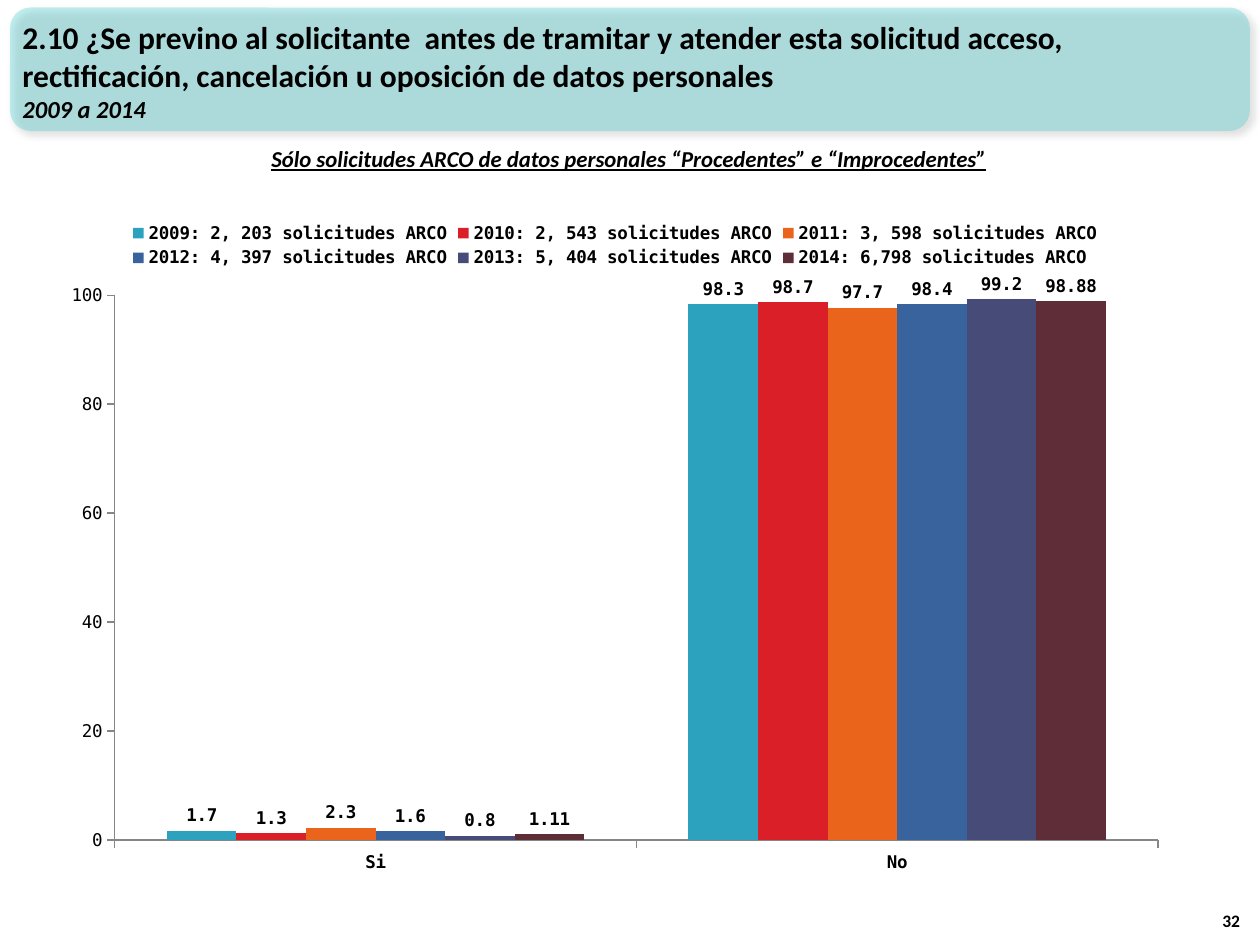
from dataclasses import dataclass

from lxml import etree
from pptx import Presentation
from pptx.chart.data import CategoryChartData
from pptx.dml.color import RGBColor
from pptx.enum.chart import XL_CHART_TYPE, XL_LABEL_POSITION, XL_LEGEND_POSITION, XL_TICK_MARK
from pptx.enum.shapes import MSO_SHAPE
from pptx.enum.text import MSO_ANCHOR, PP_ALIGN
from pptx.oxml import parse_xml
from pptx.oxml.ns import qn
from pptx.util import Inches, Pt

COLUMNS = XL_CHART_TYPE.COLUMN_CLUSTERED
OUTSIDE_END = XL_LABEL_POSITION.OUTSIDE_END
LEGEND_TOP = XL_LEGEND_POSITION.TOP
TICK_OUT = XL_TICK_MARK.OUTSIDE
ROUNDED = MSO_SHAPE.ROUNDED_RECTANGLE
TOP, MIDDLE, BOTTOM = MSO_ANCHOR.TOP, MSO_ANCHOR.MIDDLE, MSO_ANCHOR.BOTTOM
LEFT, CENTER, RIGHT = PP_ALIGN.LEFT, PP_ALIGN.CENTER, PP_ALIGN.RIGHT

WIDTH, HEIGHT = 10, 7.5
BLACK, AXIS_GREY, TEAL = "000000", "868686", "33CCCC"
TEXT_FONT, CHART_FONT = "Calibri", "DejaVu Sans Mono"
A_NS = "http://schemas.openxmlformats.org/drawingml/2006/main"
C_NS = "http://schemas.openxmlformats.org/drawingml/2006/chart"
PLOT_SHARES = {"x": 0.058, "y": 0.127, "w": 0.922, "h": 0.804}


@dataclass(frozen=True)
class Box:
    """A place on the slide, in inches."""
    left: float
    top: float
    width: float
    height: float

    def emu(self):
        """Return the four lengths in slide units."""
        return [Inches(v) for v in (self.left, self.top, self.width, self.height)]


@dataclass(frozen=True)
class Line:
    """One paragraph and its look."""
    text: str
    size: int
    italic: bool = False
    underline: bool = False


@dataclass(frozen=True)
class Label:
    """A text box with its lines."""
    box: Box
    lines: tuple[Line, ...]
    align: PP_ALIGN = LEFT
    anchor: MSO_ANCHOR = TOP


@dataclass(frozen=True)
class Year:
    """One year's series of percentages."""
    name: str
    si: float
    no: float
    color: str


BAND = Box(0.08, 0.06, WIDTH - 2 * 0.08, 0.98)
CHART = Box(0.39, 1.66, 8.98, 5.38)
LABELS = (
    Label(Box(0.08, 0.09, 9.17, 0.94), (
        Line("2.10 ¿Se previno al solicitante  antes de tramitar y atender esta solicitud acceso, "
             "rectificación, cancelación u oposición de datos personales", 18),
        Line("2009 a 2014", 14, italic=True)), anchor=MIDDLE),
    Label(Box(1.52, 1.1, 6.94, 0.32), (
        Line("Sólo solicitudes ARCO de datos personales “Procedentes” e “Improcedentes”",
             13, italic=True, underline=True),), align=CENTER),
    Label(Box(9.54, 7.04, 0.4, 0.4), (Line("32", 10),), align=RIGHT, anchor=BOTTOM),
)
YEARS = (
    Year("2009: 2, 203 solicitudes ARCO", 1.7, 98.3, "2DA2BF"),
    Year("2010: 2, 543 solicitudes ARCO", 1.3, 98.7, "DA1F28"),
    Year("2011: 3, 598 solicitudes ARCO", 2.3, 97.7, "EB641B"),
    Year("2012: 4, 397 solicitudes ARCO", 1.6, 98.4, "39639D"),
    Year("2013: 5, 404 solicitudes ARCO", 0.8, 99.2, "474B78"),
    Year("2014: 6,798 solicitudes ARCO", 1.11, 98.88, "5E2D37"),
)


def rgb(color: str) -> RGBColor:
    """Turn a hex string into a colour."""
    return RGBColor.from_string(color)


def set_font(font, name: str, size: int, bold: bool = True) -> None:
    """Set face, size, weight and black colour."""
    font.name, font.size, font.bold = name, Pt(size), bold
    font.color.rgb = rgb(BLACK)


def draw_band(s) -> None:
    """Draw the translucent title band with its soft shadow."""
    sp = s.shapes.add_shape(ROUNDED, *BAND.emu())
    sp.shadow.inherit = False
    sp.line.fill.background()
    sp.fill.solid()
    sp.fill.fore_color.rgb = rgb(TEAL)
    sp_pr = sp.fill._xPr
    color = sp_pr.find(qn("a:solidFill")).find(qn("a:srgbClr"))
    etree.SubElement(color, qn("a:alpha"), val="30000")
    sp_pr.find(qn("a:effectLst")).append(parse_xml(
        f'<a:outerShdw xmlns:a="{A_NS}" blurRad="{Pt(4)}" dist="{Pt(3)}" dir="2700000" '
        f'algn="tl" rotWithShape="0"><a:srgbClr val="{BLACK}"><a:alpha val="40000"/>'
        '</a:srgbClr></a:outerShdw>'))


def draw_label(s, label: Label) -> None:
    """Draw one text box."""
    tf = s.shapes.add_textbox(*label.box.emu()).text_frame
    tf.word_wrap, tf.vertical_anchor = True, label.anchor
    for i, line in enumerate(label.lines):
        p = tf.add_paragraph() if i else tf.paragraphs[0]
        p.text, p.alignment = line.text, label.align
        set_font(p.font, TEXT_FONT, line.size)
        p.font.italic, p.font.underline = line.italic, line.underline


def place_plot(chart) -> None:
    """Fix the inner plot area by shares of the chart."""
    area = chart.plots[0]._element.getparent()
    for old in area.findall(qn("c:layout")):
        area.remove(old)
    edges = "".join(f'<c:{k}Mode val="edge"/>' for k in "xy")
    shares = "".join(f'<c:{k} val="{v}"/>' for k, v in PLOT_SHARES.items())
    area.insert(0, parse_xml(
        f'<c:layout xmlns:c="{C_NS}"><c:manualLayout><c:layoutTarget val="inner"/>'
        f'{edges}{shares}</c:manualLayout></c:layout>'))


def draw_chart(s) -> None:
    """Draw the clustered columns by year."""
    data = CategoryChartData()
    data.categories = ["Si", "No"]
    for year in YEARS:
        data.add_series(year.name, (year.si, year.no))
    chart = s.shapes.add_chart(COLUMNS, *CHART.emu(), data).chart
    set_font(chart.font, CHART_FONT, 10, bold=False)
    chart.has_title = False
    chart.has_legend = True
    chart.legend.position, chart.legend.include_in_layout = LEGEND_TOP, False
    set_font(chart.legend.font, CHART_FONT, 10)
    for axis, bold in ((chart.category_axis, True), (chart.value_axis, False)):
        axis.has_major_gridlines = False
        axis.major_tick_mark = TICK_OUT
        axis.format.line.color.rgb = rgb(AXIS_GREY)
        set_font(axis.tick_labels.font, CHART_FONT, 10, bold)
    axis = chart.value_axis
    axis.minimum_scale, axis.maximum_scale, axis.major_unit = 0, 100, 20
    plot = chart.plots[0]
    plot.gap_width, plot.vary_by_categories = 150, False
    for series, year in zip(plot.series, YEARS):
        series.format.fill.solid()
        series.format.fill.fore_color.rgb = rgb(year.color)
        labels = series.data_labels
        labels.show_value, labels.position = True, OUTSIDE_END
        set_font(labels.font, CHART_FONT, 10)
    place_plot(chart)


def main() -> None:
    """Build and save the slide."""
    prs = Presentation()
    prs.slide_width, prs.slide_height = Inches(WIDTH), Inches(HEIGHT)
    s = prs.slides.add_slide(prs.slide_layouts[6])
    draw_band(s)
    for label in LABELS:
        draw_label(s, label)
    draw_chart(s)
    prs.save("out.pptx")


if __name__ == "__main__":
    main()
